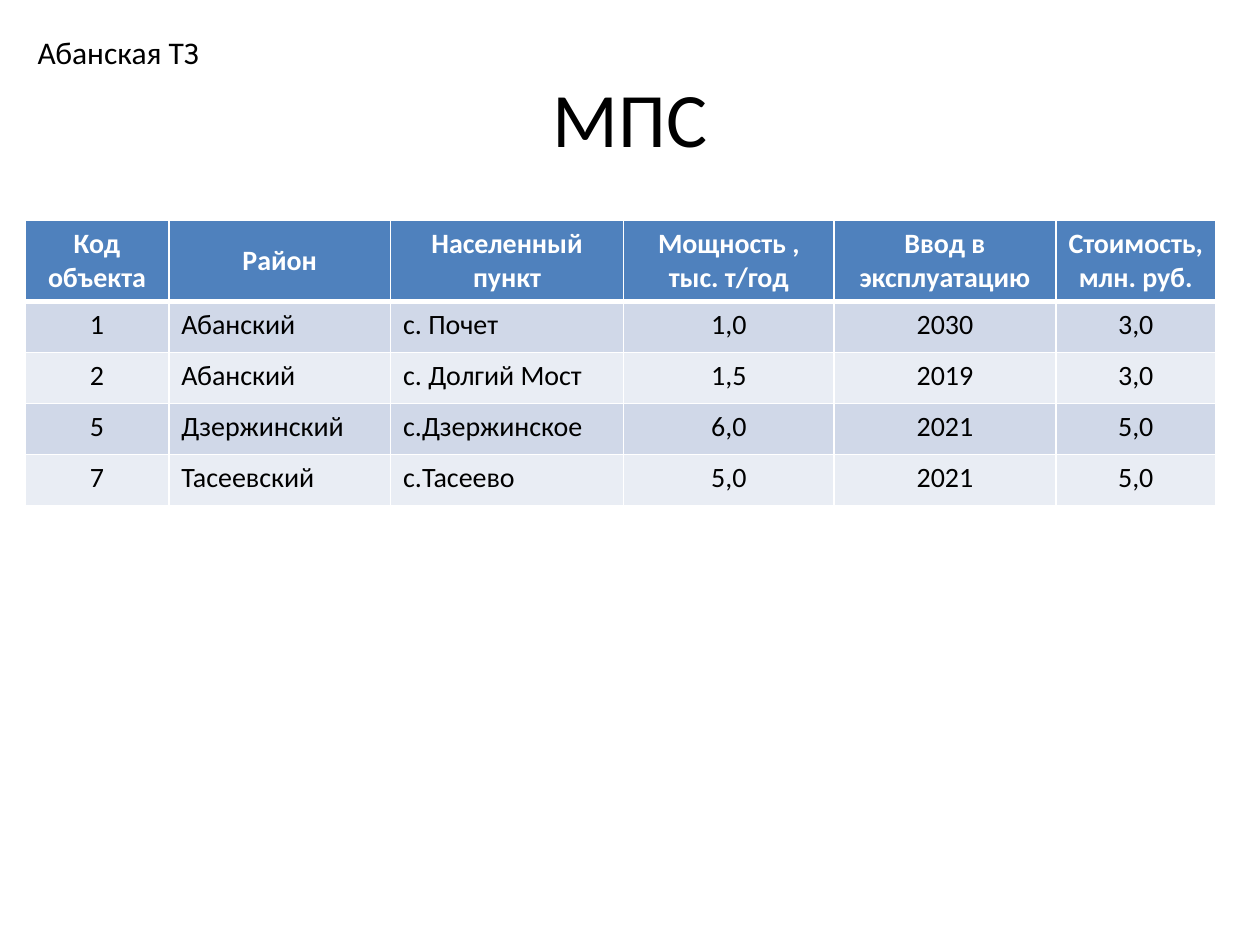
from pptx import Presentation
from pptx.dml.color import RGBColor
from pptx.enum.text import MSO_ANCHOR as Anchor, MSO_AUTO_SIZE as AutoSize, PP_ALIGN as Align
from pptx.oxml import parse_xml
from pptx.oxml.ns import nsdecls
from pptx.util import Inches, Pt

WIDTH, HEIGHT = Inches(10), Inches(7.5)
FONT = "Calibri"
BLACK, WHITE, HEADER_BLUE = "000000", "FFFFFF", "4F81BD"
BANDS = ("D0D8E8", "E9EDF4")
LEFT_COLUMNS = (1, 2)
COLUMN_WIDTHS = (1.14, 1.76, 1.85, 1.67, 1.76, 1.27)
HEADER_HEIGHT, ROW_HEIGHT = 0.64, 0.405
FACILITIES = [
    ("Код объекта", "Район", "Населенный пункт", "Мощность , тыс. т/год",
     "Ввод в эксплуатацию", "Стоимость, млн. руб."),
    ("1", "Абанский", "с. Почет", "1,0", "2030", "3,0"),
    ("2", "Абанский", "с. Долгий Мост", "1,5", "2019", "3,0"),
    ("5", "Дзержинский", "с.Дзержинское", "6,0", "2021", "5,0"),
    ("7", "Тасеевский", "с.Тасеево", "5,0", "2021", "5,0"),
]


def share(x, y, w, h):
    return int(WIDTH * x), int(HEIGHT * y), int(WIDTH * w), int(HEIGHT * h)


def color(value):
    return RGBColor.from_string(value)


def write(frame, text, size, ink=BLACK, align=Align.LEFT, bold=False):
    frame.text = text
    paragraph = frame.paragraphs[0]
    paragraph.alignment = align
    font = paragraph.font
    font.name, font.size, font.bold = FONT, Pt(size), bold
    font.color.rgb = color(ink)


def add_borders(cell, bottom_width):
    properties = cell._tc.get_or_add_tcPr()
    for side, width in zip("LRTB", (1, 1, 1, bottom_width)):
        properties.append(parse_xml(
            f'<a:ln{side} {nsdecls("a")} w="{Pt(width)}"><a:solidFill>'
            f'<a:srgbClr val="{WHITE}"/></a:solidFill></a:ln{side}>'))


def place_title(slide, box):
    title = slide.shapes.title
    title.left, title.top, title.width, title.height = box
    write(title.text_frame, "МПС", 44, align=Align.CENTER)
    title.text_frame.vertical_anchor = Anchor.MIDDLE


def place_zone(slide, box):
    frame = slide.shapes.add_textbox(*box).text_frame
    frame.word_wrap = False
    frame.auto_size = AutoSize.SHAPE_TO_FIT_TEXT
    write(frame, "Абанская ТЗ", 18)


def place_facilities(slide, box):
    table = slide.shapes.add_table(len(FACILITIES), len(COLUMN_WIDTHS), *box).table
    for column, width in zip(table.columns, COLUMN_WIDTHS):
        column.width = int(box[2] * width / sum(COLUMN_WIDTHS))
    for r, facility in enumerate(FACILITIES):
        header = r == 0
        table.rows[r].height = Inches(HEADER_HEIGHT if header else ROW_HEIGHT)
        for c, text in enumerate(facility):
            cell = table.cell(r, c)
            left = c in LEFT_COLUMNS and not header
            write(cell.text_frame, text, 16, WHITE if header else BLACK,
                  Align.LEFT if left else Align.CENTER, header)
            cell.vertical_anchor = Anchor.MIDDLE if header else Anchor.TOP
            add_borders(cell, 3 if header else 1)
            cell.fill.solid()
            cell.fill.fore_color.rgb = color(HEADER_BLUE if header else BANDS[(r - 1) % 2])


def main():
    deck = Presentation()
    deck.slide_width, deck.slide_height = WIDTH, HEIGHT
    slide = deck.slides.add_slide(deck.slide_layouts[5])
    place_title(slide, share(0.05, 0.04, 0.9, 1 / 6))
    place_facilities(slide, share(0.02, 1.75 / 7.5, 0.945, 2.26 / 7.5))
    place_zone(slide, share(0.02, 0.21 / 7.5, 0.15, 0.71 / 7.5))
    deck.save("out.pptx")


if __name__ == "__main__":
    main()
